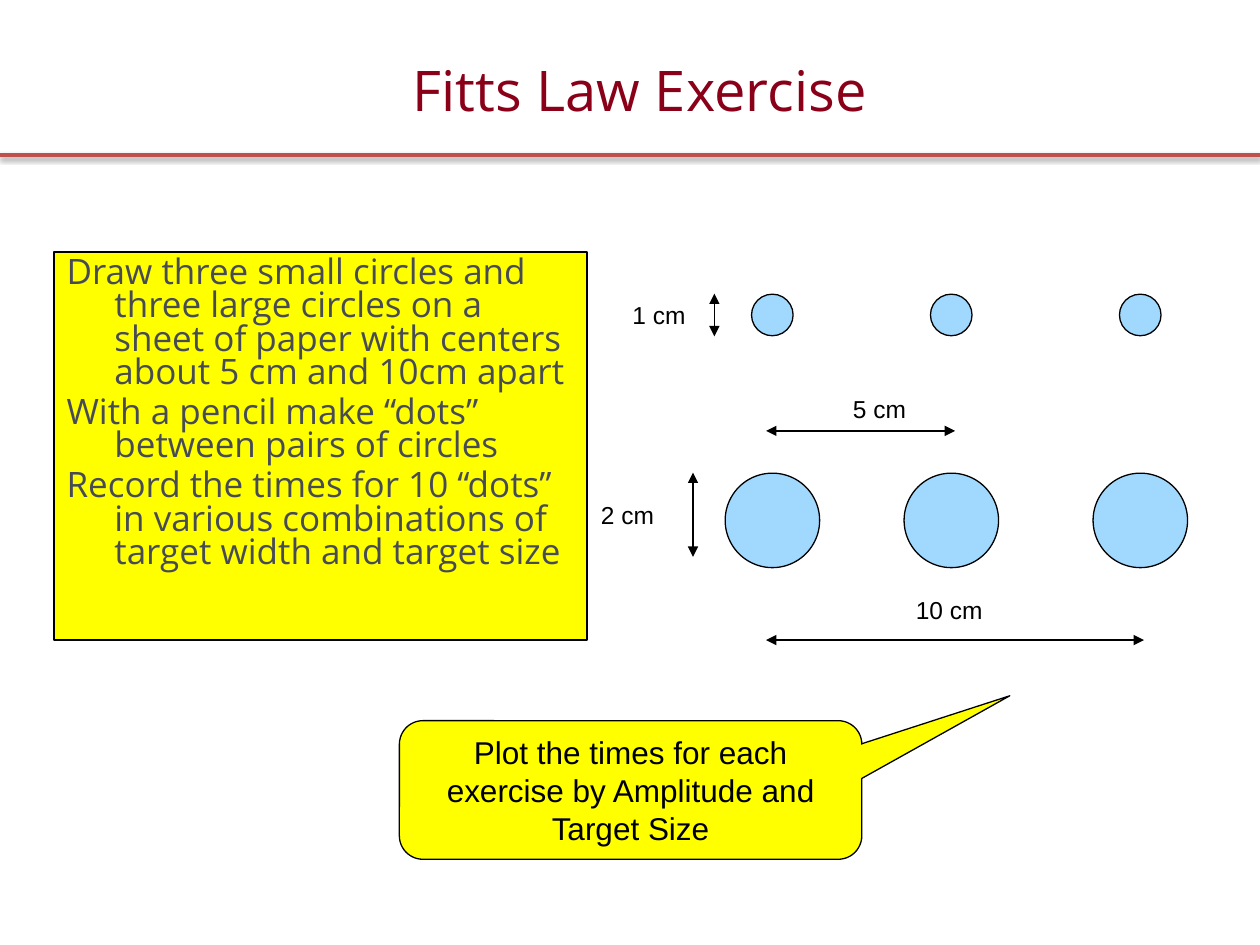
from lxml.etree import SubElement
from pptx import Presentation
from pptx.dml.color import RGBColor
from pptx.enum.shapes import MSO_CONNECTOR, MSO_SHAPE
from pptx.enum.text import MSO_ANCHOR, PP_ALIGN
from pptx.oxml.ns import qn
from pptx.util import Inches, Pt

MAROON = RGBColor(0x89, 0x00, 0x18)
RED = RGBColor(0xC0, 0x50, 0x4D)
SLATE = RGBColor(0x47, 0x4B, 0x55)
YELLOW = RGBColor(0xFF, 0xFF, 0x00)
SKY = RGBColor(0xA0, 0xD8, 0xFE)
BLACK = RGBColor(0x00, 0x00, 0x00)

TITLE_FONT = {"name": "Open Sans", "size": Pt(32)}
BODY_FONT = {"name": "Open Sans", "size": Pt(20)}
LABEL_FONT = {"name": "Arial", "size": Pt(14)}
CALLOUT_FONT = {"name": "Arial", "size": Pt(18)}

STEPS = [
    "Draw three small circles and three large circles on a sheet of paper with centers about 5 cm and 10cm apart",
    "With a pencil make “dots” between pairs of circles",
    "Record the times for 10 “dots” in various combinations of target width and target size",
]
CIRCLE_CENTERS = [1.46, 2.88, 4.38]
CIRCLE_ROWS = [(0.17, 0.33), (1.8, 0.75)]
ARROWS = [
    (1.41, 1.09, 2.91, 1.09),
    (1.41, 2.75, 4.41, 2.75),
    (1, 0, 1, 0.34),
    (0.83, 1.42, 0.83, 2.09),
]
LABELS = [("5 cm", 2, 0.75), ("10 cm", 2.5, 2.34), ("2 cm", 0, 1.59), ("1 cm", 0.25, 0)]


def apply_format(target, values):
    """Set each attribute of the target from a dict."""
    for name, value in values.items():
        setattr(target, name, value)


def write_text(shape, lines, font, color, layout, anchor=MSO_ANCHOR.TOP):
    """Write one paragraph for each line into the shape."""
    frame = shape.text_frame
    apply_format(frame, {"word_wrap": True, "vertical_anchor": anchor})
    for index, line in enumerate(lines):
        para = frame.paragraphs[0] if index == 0 else frame.add_paragraph()
        apply_format(para, layout)
        if index == 0:
            para.space_before = Pt(0)
        span = para.add_run()
        span.text = line
        apply_format(span.font, font)
        span.font.color.rgb = color


def add_figure(page, kind, box, fill, width):
    """Add a filled, black-edged preset shape."""
    shape = page.shapes.add_shape(kind, *map(Inches, box))
    shape.shadow.inherit = False
    shape.fill.solid()
    shape.fill.fore_color.rgb = fill
    shape.line.color.rgb = BLACK
    shape.line.width = Pt(width)
    return shape


def add_line(page, ends, color, width):
    """Add a straight line and return it with its empty effect list."""
    line = page.shapes.add_connector(MSO_CONNECTOR.STRAIGHT, *map(Inches, ends))
    line.line.color.rgb = color
    line.line.width = Pt(width)
    effects = SubElement(line._element.spPr, qn("a:effectLst"))
    return line, effects


def add_rule(page, left, top, width):
    """Add the red header rule with a soft shadow below."""
    effects = add_line(page, (left, top, left + width, top), RED, 2)[1]
    shadow = SubElement(effects, qn("a:outerShdw"), blurRad=str(Pt(3.1)), dist=str(Pt(1.6)),
                        dir="5400000", rotWithShape="0")
    color = SubElement(shadow, qn("a:srgbClr"), val=str(BLACK))
    SubElement(color, qn("a:alpha"), val="38000")


def add_title(page, box):
    """Add the slide title."""
    title = page.shapes.add_textbox(*map(Inches, box))
    write_text(title, ["Fitts Law Exercise"], TITLE_FONT, MAROON, {"alignment": PP_ALIGN.CENTER})


def add_steps(page, box):
    """Add the yellow panel of steps with hanging indents."""
    panel = add_figure(page, MSO_SHAPE.RECTANGLE, box, YELLOW, 1.5)
    layout = {"alignment": PP_ALIGN.LEFT, "line_spacing": 0.79, "space_before": Pt(4)}
    write_text(panel, STEPS, BODY_FONT, SLATE, layout)
    for para in panel.text_frame.paragraphs:
        props = para._p.get_or_add_pPr()
        props.set("marL", str(Inches(0.38)))
        props.set("indent", str(Inches(-0.38)))


def add_diagram(page, left, top):
    """Add the rows of target circles with their measures."""
    for middle, size in CIRCLE_ROWS:
        for center in CIRCLE_CENTERS:
            box = (left + center - size / 2, top + middle - size / 2, size, size)
            add_figure(page, MSO_SHAPE.OVAL, box, SKY, 0.75)
    for x1, y1, x2, y2 in ARROWS:
        arrow, _ = add_line(page, (left + x1, top + y1, left + x2, top + y2), BLACK, 0.75)
        outline = arrow.line._get_or_add_ln()
        for tag in ("a:headEnd", "a:tailEnd"):
            SubElement(outline, qn(tag), type="triangle")
    for text, x, y in LABELS:
        label = page.shapes.add_textbox(*map(Inches, (left + x, top + y, 0.75, 0.33)))
        write_text(label, [text], LABEL_FONT, BLACK, {"alignment": PP_ALIGN.LEFT})


def add_callout(page, box):
    """Add the callout that asks for the plot."""
    callout = add_figure(page, MSO_SHAPE.ROUNDED_RECTANGULAR_CALLOUT, box, YELLOW, 0.75)
    for index, value in enumerate((0.82, -0.68, 0.17)):
        callout.adjustments[index] = value
    write_text(callout, ["Plot the times for each exercise by Amplitude and Target Size"],
               CALLOUT_FONT, BLACK, {"alignment": PP_ALIGN.CENTER}, MSO_ANCHOR.MIDDLE)


def main():
    """Build the deck and save it."""
    deck = Presentation()
    apply_format(deck, {"slide_width": Inches(10), "slide_height": Inches(7.5)})
    page = deck.slides.add_slide(deck.slide_layouts[6])
    add_rule(page, 0, 1.23, 10)
    add_title(page, (0.33, 0.39, 9.5, 0.92))
    add_steps(page, (0.43, 2, 4.23, 3.08))
    add_diagram(page, 4.67, 2.33)
    add_callout(page, (3.17, 5.72, 3.67, 1.1))
    deck.save("out.pptx")


if __name__ == "__main__":
    main()
